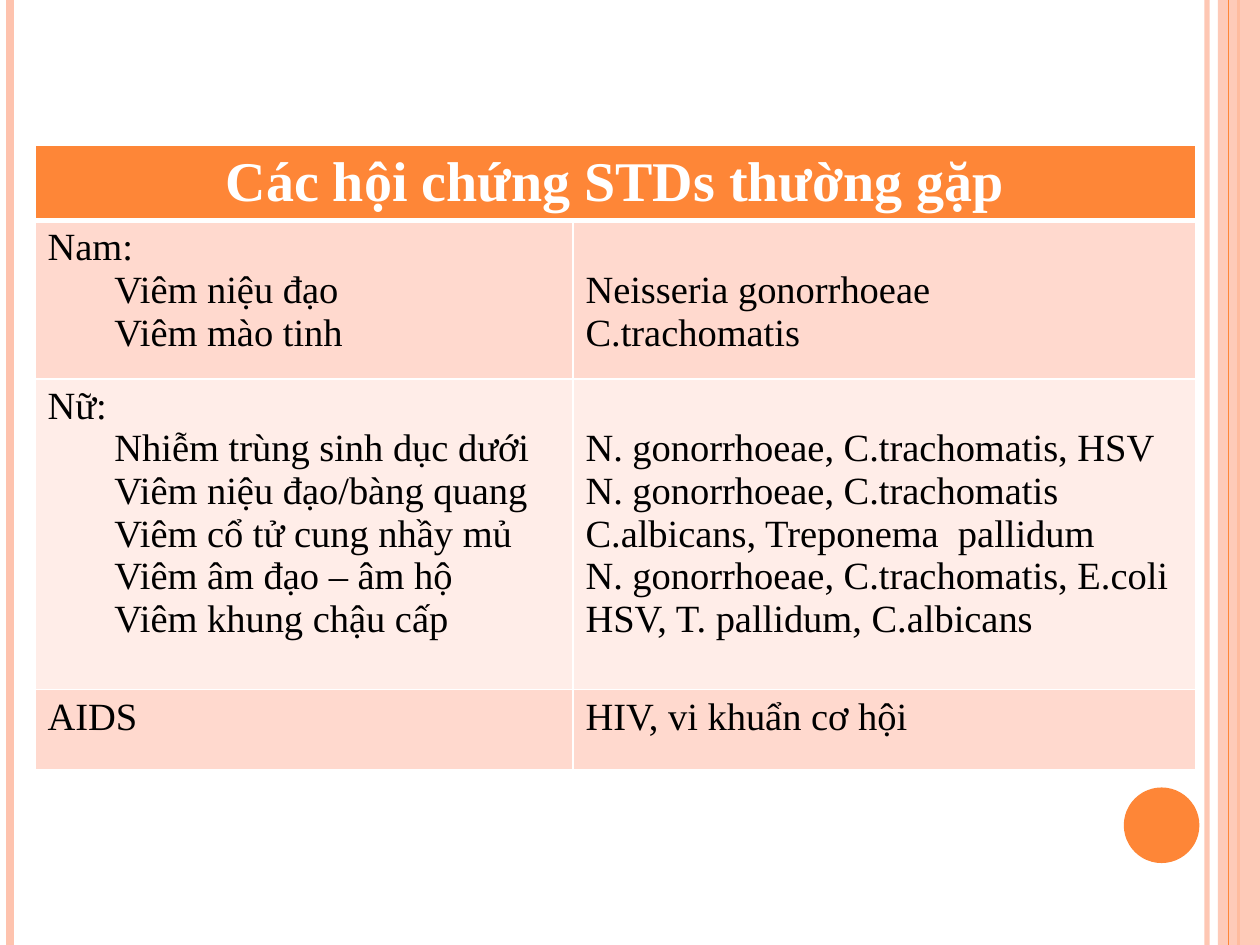
"""Build a slide with a table of common STD syndromes and their causes."""
from lxml.etree import SubElement
from pptx import Presentation
from pptx.dml.color import RGBColor
from pptx.enum.shapes import MSO_CONNECTOR, MSO_SHAPE
from pptx.enum.text import PP_ALIGN
from pptx.oxml.ns import qn
from pptx.util import Pt

ORANGE, PEACH, WHITE, BLACK = "FE8637", "FEC3AE", "FFFFFF", "000000"
DARK_BAND, LIGHT_BAND = "FFD9CE", "FFEDE8"
SLIDE_WIDTH, SLIDE_HEIGHT = 720, 540
LINE_HEIGHT, INDENT = 24.4, 38.2


def color(hex_string):
    return RGBColor.from_string(hex_string)


def set_opacity(shape, percent):
    for element in shape._element.spPr.iter(qn("a:srgbClr")):
        SubElement(element, qn("a:alpha"), val=str(percent * 1000))


presentation = Presentation()
presentation.slide_width = Pt(SLIDE_WIDTH)
presentation.slide_height = Pt(SLIDE_HEIGHT)
slide = presentation.slides.add_slide(presentation.slide_layouts[6])

decorations = [
    ("line", 689.8, PEACH, 3, 93),
    ("line", 5.8, PEACH, 4.5, 100),
    ("line", 707.8, ORANGE, 1.5, 100),
    (MSO_SHAPE.RECTANGLE, (696, 0, 24, SLIDE_HEIGHT), PEACH, 0, 87),
    ("line", 702, ORANGE, 0.75, 100),
    (MSO_SHAPE.OVAL, (642.2, 450, 43.2, 43.2), ORANGE, 0, 100),
]
for kind, place, hex_string, width, opacity in decorations:
    if kind == "line":
        shape = slide.shapes.add_connector(
            MSO_CONNECTOR.STRAIGHT, Pt(place), Pt(0), Pt(place), Pt(SLIDE_HEIGHT))
        shape.line.color.rgb = color(hex_string)
        shape.line.width = Pt(width)
        SubElement(shape._element.spPr, qn("a:effectLst"))
    else:
        shape = slide.shapes.add_shape(kind, *[Pt(length) for length in place])
        shape.shadow.inherit = False
        shape.fill.solid()
        shape.fill.fore_color.rgb = color(hex_string)
        shape.line.fill.background()
    if opacity < 100:
        set_opacity(shape, opacity)

rows = [
    (41.8, ORANGE, ["Các hội chứng STDs thường gặp"], []),
    (90.5, DARK_BAND,
     ["Nam:", "Viêm niệu đạo", "Viêm mào tinh"],
     ["Neisseria gonorrhoeae", "C.trachomatis"]),
    (177.7, LIGHT_BAND,
     ["Nữ:", "Nhiễm trùng sinh dục dưới", "Viêm niệu đạo/bàng quang",
      "Viêm cổ tử cung nhầy mủ", "Viêm âm đạo – âm hộ", "Viêm khung chậu cấp"],
     ["N. gonorrhoeae, C.trachomatis, HSV", "N. gonorrhoeae, C.trachomatis",
      "C.albicans, Treponema  pallidum", "N. gonorrhoeae, C.trachomatis, E.coli",
      "HSV, T. pallidum, C.albicans"]),
    (46, DARK_BAND, ["AIDS"], ["HIV, vi khuẩn cơ hội"]),
]
column_widths = [307.4, 355.7]
table = slide.shapes.add_table(
    len(rows), 2, Pt(20), Pt(83.2), Pt(sum(column_widths)),
    Pt(sum(row[0] for row in rows))).table
table.first_row = table.horz_banding = False
for column, width in zip(table.columns, column_widths):
    column.width = Pt(width)

for row_index, (height, fill, *texts) in enumerate(rows):
    header = row_index == 0
    table.rows[row_index].height = Pt(height)
    for column_index, lines in enumerate(texts):
        cell = table.cell(row_index, column_index)
        properties = cell._tc.get_or_add_tcPr()
        for side in ("L", "R", "T", "B"):
            thick = (header and side == "B") or (row_index == 1 and side == "T")
            border = SubElement(properties, qn(f"a:ln{side}"), w=str(Pt(3 if thick else 1)))
            SubElement(SubElement(border, qn("a:solidFill")), qn("a:srgbClr"), val=WHITE)
        cell.fill.solid()
        cell.fill.fore_color.rgb = color(fill)
        if column_index == 1 and len(lines) > 1:
            cell.margin_top = Pt(3.6 + LINE_HEIGHT)
        for line_index, text in enumerate(lines):
            frame = cell.text_frame
            paragraph = frame.add_paragraph() if line_index else frame.paragraphs[0]
            if header:
                paragraph.alignment = PP_ALIGN.CENTER
            if column_index == 0 and line_index:
                paragraph._p.get_or_add_pPr().set("marL", str(Pt(INDENT)))
            run = paragraph.add_run()
            run.text = text
            run.font.name = "Times New Roman"
            run.font.size = Pt(32 if header else 22)
            run.font.bold = header
            run.font.color.rgb = color(WHITE if header else BLACK)

table.cell(0, 0).merge(table.cell(0, 1))
presentation.save("out.pptx")
